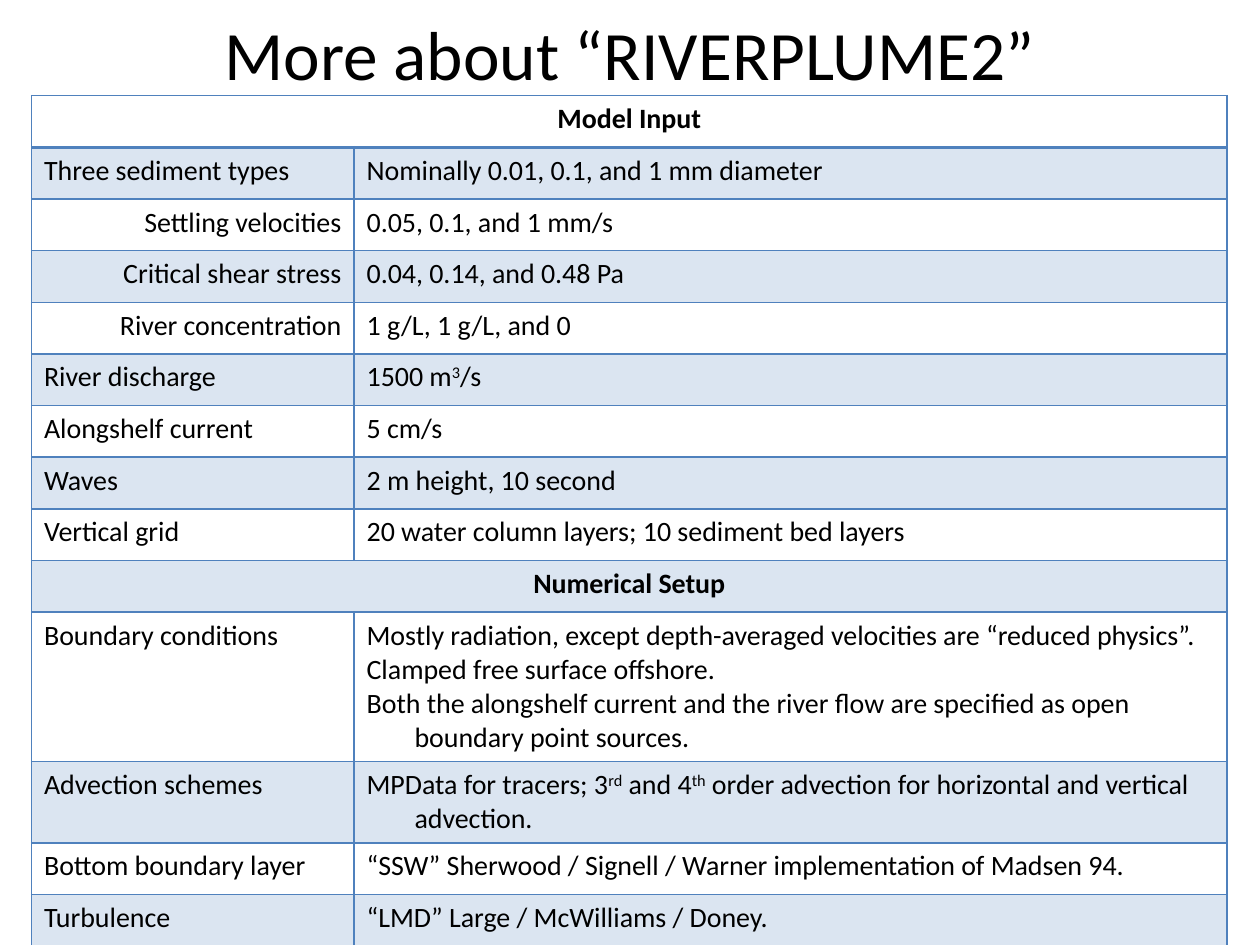
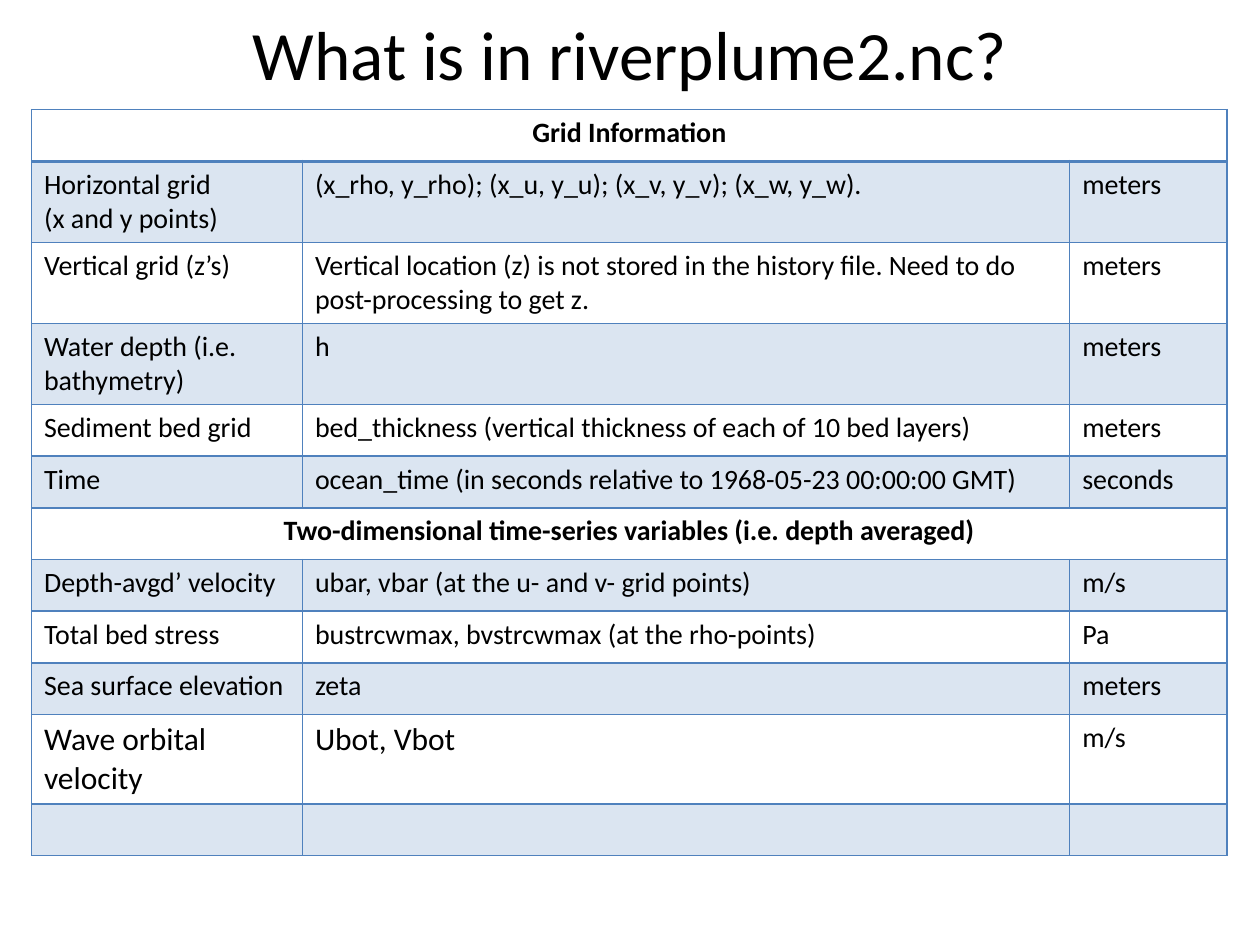
import dataclasses

import lxml.etree
import pptx
import pptx.dml.color
import pptx.enum.text
import pptx.oxml.ns
import pptx.presentation
import pptx.slide
import pptx.table
import pptx.text.text
import pptx.util

PX = 9144
FONT = "Calibri"
COLORS = {"text": "000000", "accent": "4F81BD"}
BAND_ALPHA = 20
TITLE_BOX = (50, 18, 900, 48)
TITLE_SIZE = 39.6
BODY_SIZE = 16
TABLE_LEFT = 25
ROW_HEIGHT = 41
HANG = 38
SUPERSCRIPT_MARK = "^"
ALIGN = pptx.enum.text.PP_ALIGN


@dataclasses.dataclass(frozen=True)
class Entry:
    paras: tuple[str, ...]
    align: ALIGN = ALIGN.LEFT
    size: int = BODY_SIZE
    bold: bool = False
    hanging: bool = False


@dataclasses.dataclass(frozen=True)
class TableSlide:
    title: str
    top: int
    columns: tuple[int, ...]
    rows: tuple[tuple[Entry, ...], ...]


def plain(text: str) -> Entry:
    return Entry((text,))


def large(text: str) -> Entry:
    return Entry((text,), size=18)


def hanging(*paras: str) -> Entry:
    return Entry(paras, hanging=True)


def heading(text: str) -> tuple[Entry, ...]:
    return (Entry((text,), align=ALIGN.CENTER, bold=True),)


def row(*texts: str) -> tuple[Entry, ...]:
    return tuple(plain(text) for text in texts)


def subrow(label: str, value: str) -> tuple[Entry, ...]:
    return Entry((label,), align=ALIGN.RIGHT), plain(value)


SLIDES = (
    TableSlide(
        "More about “RIVERPLUME2”", 76, (256, 693),
        (
            heading("Model Input"),
            row("Three sediment types", "Nominally 0.01, 0.1, and 1 mm diameter"),
            subrow("Settling velocities", "0.05, 0.1, and 1 mm/s"),
            subrow("Critical shear stress", "0.04, 0.14, and 0.48 Pa"),
            subrow("River concentration", "1 g/L, 1 g/L, and 0"),
            row("River discharge", "1500 m^3^/s"),
            row("Alongshelf current", "5 cm/s"),
            row("Waves", "2 m height, 10 second"),
            row("Vertical grid", "20 water column layers; 10 sediment bed layers"),
            heading("Numerical Setup"),
            (
                plain("Boundary conditions"),
                hanging(
                    "Mostly radiation, except depth-averaged velocities are “reduced physics”.",
                    "Clamped free surface offshore.",
                    "Both the alongshelf current and the river flow are specified as open "
                    "boundary point sources.",
                ),
            ),
            (
                plain("Advection schemes"),
                hanging("MPData for tracers; 3^rd^ and 4^th^ order advection for "
                        "horizontal and vertical advection."),
            ),
            row("Bottom boundary layer",
                "“SSW” Sherwood / Signell / Warner implementation of Madsen 94."),
            row("Turbulence", "“LMD” Large / McWilliams / Doney."),
        ),
    ),
    TableSlide(
        "What is in riverplume2.nc?", 87, (215, 609, 125),
        (
            heading("Grid Information"),
            row("Horizontal grid\n(x and y points)",
                "(x_rho, y_rho); (x_u, y_u); (x_v, y_v); (x_w, y_w).", "meters"),
            row("Vertical grid (z’s)",
                "Vertical location (z) is not stored in the history file. Need to do "
                "post-processing to get z.", "meters"),
            row("Water depth (i.e. bathymetry)", "h", "meters"),
            row("Sediment bed grid",
                "bed_thickness (vertical thickness of each of 10 bed layers)", "meters"),
            row("Time", "ocean_time (in seconds relative to 1968-05-23 00:00:00 GMT)",
                "seconds"),
            heading("Two-dimensional time-series variables (i.e. depth averaged)"),
            (plain("Depth-avgd’ velocity"),
             hanging("ubar, vbar (at the u- and v- grid points)"), hanging("m/s")),
            (plain("Total bed stress"),
             hanging("bustrcwmax, bvstrcwmax (at the rho-points)"), hanging("Pa")),
            row("Sea surface elevation", "zeta", "meters"),
            (large("Wave orbital velocity"), large("Ubot, Vbot"), plain("m/s")),
            (),
        ),
    ),
)


def add_run(para: pptx.text.text._Paragraph, text: str, size: float, bold: bool = False,
            superscript: bool = False) -> None:
    span = para.add_run()
    span.text = text
    span.font.name = FONT
    span.font.size = pptx.util.Pt(size)
    span.font.bold = bold
    span.font.color.rgb = pptx.dml.color.RGBColor.from_string(COLORS["text"])
    if superscript:
        span.font._element.set("baseline", "30000")


def fill_entry(cell: pptx.table._Cell, entry: Entry) -> None:
    frame = cell.text_frame
    for number, text in enumerate(entry.paras):
        para = frame.add_paragraph() if number else frame.paragraphs[0]
        para.alignment = entry.align
        if entry.hanging:
            properties = para._p.get_or_add_pPr()
            properties.set("marL", str(HANG * PX))
            properties.set("indent", str(-HANG * PX))
        for line_number, line in enumerate(text.split("\n")):
            if line_number:
                para.add_line_break()
            for part_number, part in enumerate(line.split(SUPERSCRIPT_MARK)):
                add_run(para, part, entry.size, entry.bold, part_number % 2 == 1)


def add_color(parent: lxml.etree._Element) -> None:
    fill = lxml.etree.SubElement(parent, pptx.oxml.ns.qn("a:solidFill"))
    lxml.etree.SubElement(fill, pptx.oxml.ns.qn("a:srgbClr"), val=COLORS["accent"])


def style_cell(cell: pptx.table._Cell, row_number: int) -> None:
    properties = cell._tc.get_or_add_tcPr()
    if row_number % 2:
        cell.fill.solid()
        cell.fill.fore_color.rgb = pptx.dml.color.RGBColor.from_string(COLORS["accent"])
        color = properties.find(".//" + pptx.oxml.ns.qn("a:srgbClr"))
        lxml.etree.SubElement(color, pptx.oxml.ns.qn("a:alpha"), val=str(BAND_ALPHA * 1000))
    else:
        cell.fill.background()
    widths = {
        "L": 1,
        "R": 1,
        "T": 2 if row_number == 1 else 1,
        "B": 2 if row_number == 0 else 1,
    }
    for position, (side, width) in enumerate(widths.items()):
        border = lxml.etree.Element(pptx.oxml.ns.qn(f"a:ln{side}"), w=str(pptx.util.Pt(width)))
        add_color(border)
        properties.insert(position, border)


def add_title(page: pptx.slide.Slide, text: str) -> None:
    box = page.shapes.title
    box.left, box.top, box.width, box.height = (length * PX for length in TITLE_BOX)
    frame = box.text_frame
    frame.auto_size = pptx.enum.text.MSO_AUTO_SIZE.NONE
    frame.vertical_anchor = pptx.enum.text.MSO_ANCHOR.MIDDLE
    para = frame.paragraphs[0]
    para.alignment = ALIGN.CENTER
    add_run(para, text, TITLE_SIZE)


def add_grid(page: pptx.slide.Slide, content: TableSlide) -> None:
    row_count, column_count = len(content.rows), len(content.columns)
    grid = page.shapes.add_table(
        row_count, column_count, TABLE_LEFT * PX, content.top * PX,
        sum(content.columns) * PX, row_count * ROW_HEIGHT * PX,
    ).table
    grid.first_row = False
    grid.horz_banding = False
    for column, width in zip(grid.columns, content.columns):
        column.width = width * PX
    for row_number, entries in enumerate(content.rows):
        for column_number in range(column_count):
            style_cell(grid.cell(row_number, column_number), row_number)
        if len(entries) == 1:
            grid.cell(row_number, 0).merge(grid.cell(row_number, column_count - 1))
        for column_number, entry in enumerate(entries):
            fill_entry(grid.cell(row_number, column_number), entry)


def add_table_slide(deck: pptx.presentation.Presentation, content: TableSlide) -> None:
    page = deck.slides.add_slide(deck.slide_layouts.get_by_name("Title Only"))
    add_title(page, content.title)
    add_grid(page, content)


def main() -> None:
    deck = pptx.Presentation()
    deck.slide_width = 1000 * PX
    deck.slide_height = 750 * PX
    for content in SLIDES:
        add_table_slide(deck, content)
    deck.save("out.pptx")


if __name__ == "__main__":
    main()
